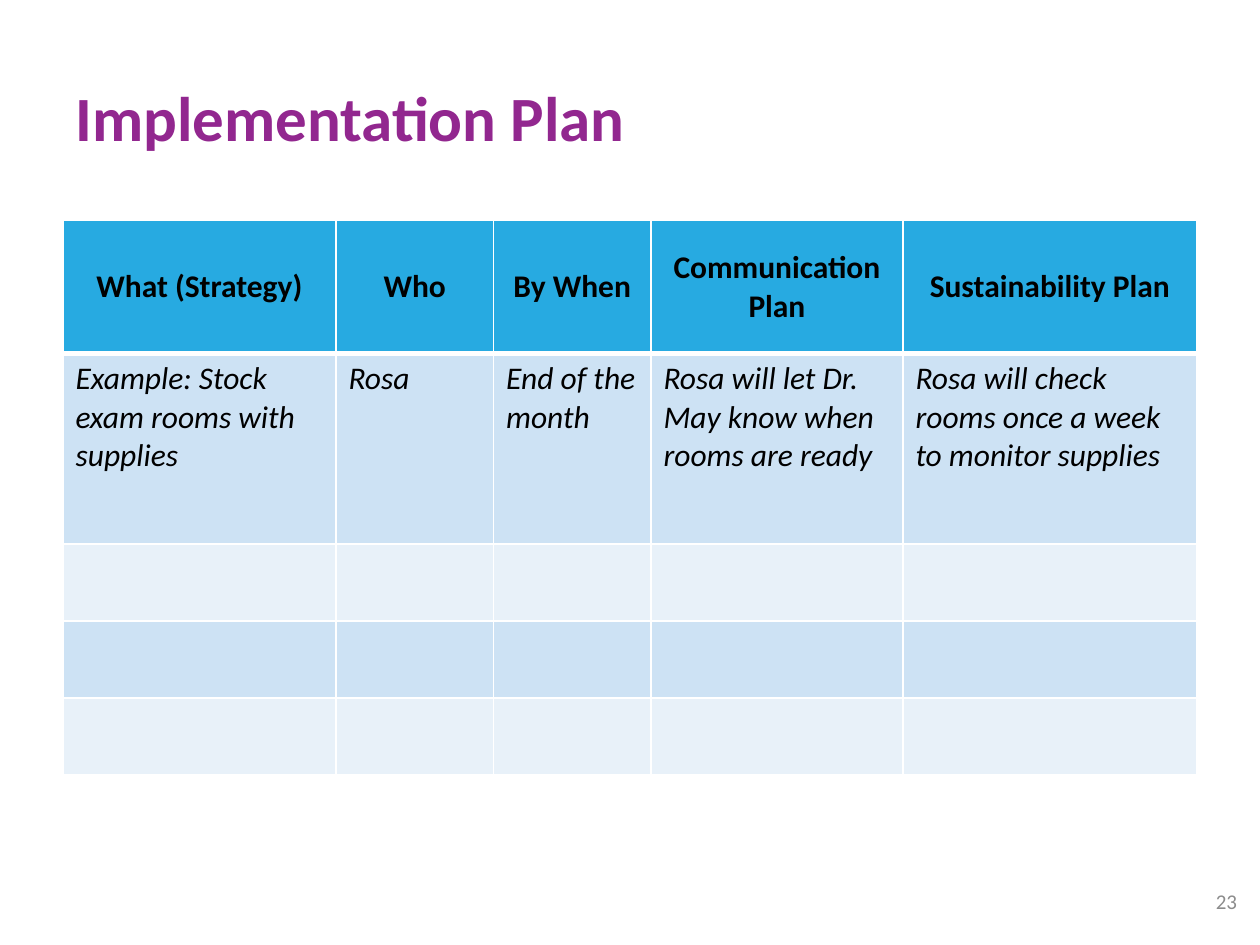
from lxml.etree import SubElement
from pptx import Presentation
from pptx.dml.color import RGBColor
from pptx.enum.text import MSO_ANCHOR as Anchor, PP_ALIGN as Align
from pptx.oxml.ns import qn
from pptx.util import Pt

PURPLE = RGBColor(0x92, 0x27, 0x8F)
BLUE = RGBColor(0x27, 0xAA, 0xE1)
BAND_DARK = RGBColor(0xCD, 0xE2, 0xF4)
BAND_LIGHT = RGBColor(0xE8, 0xF1, 0xF9)
BLACK = RGBColor(0, 0, 0)
GRAY = RGBColor(0x8C, 0x8C, 0x8C)
WHITE = RGBColor(0xFF, 0xFF, 0xFF)

COLUMN_WIDTHS = [156, 90, 90, 144, 168]
ROW_HEIGHTS = [76, 109, 44, 44, 44]
HEADINGS = ["What (Strategy)", "Who", "By When", "Communication Plan", "Sustainability Plan"]
EXAMPLE = [
    "Example: Stock exam rooms with supplies",
    "Rosa",
    "End of the month",
    "Rosa will let Dr. May know when rooms are ready",
    "Rosa will check rooms once a week to monitor supplies",
]


class SlideBuilder:
    font_name = "Calibri"

    def __init__(self, page):
        self.page = page

    def fill_text(self, frame, text, color, align=Align.LEFT, **formats):
        para = frame.paragraphs[0]
        para.alignment = align
        span = para.add_run()
        span.text = text
        span.font.color.rgb = color
        for name, value in {"name": self.font_name, **formats}.items():
            setattr(span.font, name, value)

    def text(self, bounds, text, color, **formats):
        box = self.page.shapes.add_textbox(*map(Pt, bounds))
        frame = box.text_frame
        frame.word_wrap = True
        frame.vertical_anchor = Anchor.MIDDLE
        self.fill_text(frame, text, color, **formats)

    def border(self, cell, widths):
        """Draw white cell borders; widths maps each side (L, R, T, B) to points."""
        properties = cell._tc.get_or_add_tcPr()
        for side, width in widths.items():
            line = SubElement(properties, qn(f"a:ln{side}"), w=str(Pt(width)))
            fill = SubElement(line, qn("a:solidFill"))
            SubElement(fill, qn("a:srgbClr"), val=str(WHITE))

    def table(self, left, top, widths, heights, contents):
        bounds = map(Pt, (left, top, sum(widths), sum(heights)))
        table = self.page.shapes.add_table(len(heights), len(widths), *bounds).table
        for column, width in zip(table.columns, widths):
            column.width = Pt(width)
        for index, (row, height) in enumerate(zip(table.rows, heights)):
            row.height = Pt(height)
            header = index == 0
            color = BLUE if header else BAND_DARK if index % 2 else BAND_LIGHT
            for position, cell in enumerate(row.cells):
                self.border(cell, {"L": 1, "R": 1, "T": 3 if index == 1 else 1,
                                   "B": 3 if header else 1})
                cell.fill.solid()
                cell.fill.fore_color.rgb = color
                if header:
                    cell.vertical_anchor = Anchor.MIDDLE
                if index < len(contents):
                    self.fill_text(cell.text_frame, contents[index][position], BLACK,
                                   align=Align.CENTER if header else Align.LEFT,
                                   size=Pt(18), bold=header, italic=not header)


def main():
    deck = Presentation()
    deck.slide_width, deck.slide_height = Pt(720), Pt(540)
    builder = SlideBuilder(deck.slides.add_slide(deck.slide_layouts[6]))
    builder.text((36, 21.6, 390, 90), "Implementation Plan", PURPLE, size=Pt(36), bold=True)
    builder.table(36, 126, COLUMN_WIDTHS, ROW_HEIGHTS, [HEADINGS, EXAMPLE])
    builder.text((678, 500.4, 36, 28.8), "23", GRAY, align=Align.RIGHT, size=Pt(12))
    deck.save("out.pptx")


if __name__ == "__main__":
    main()
